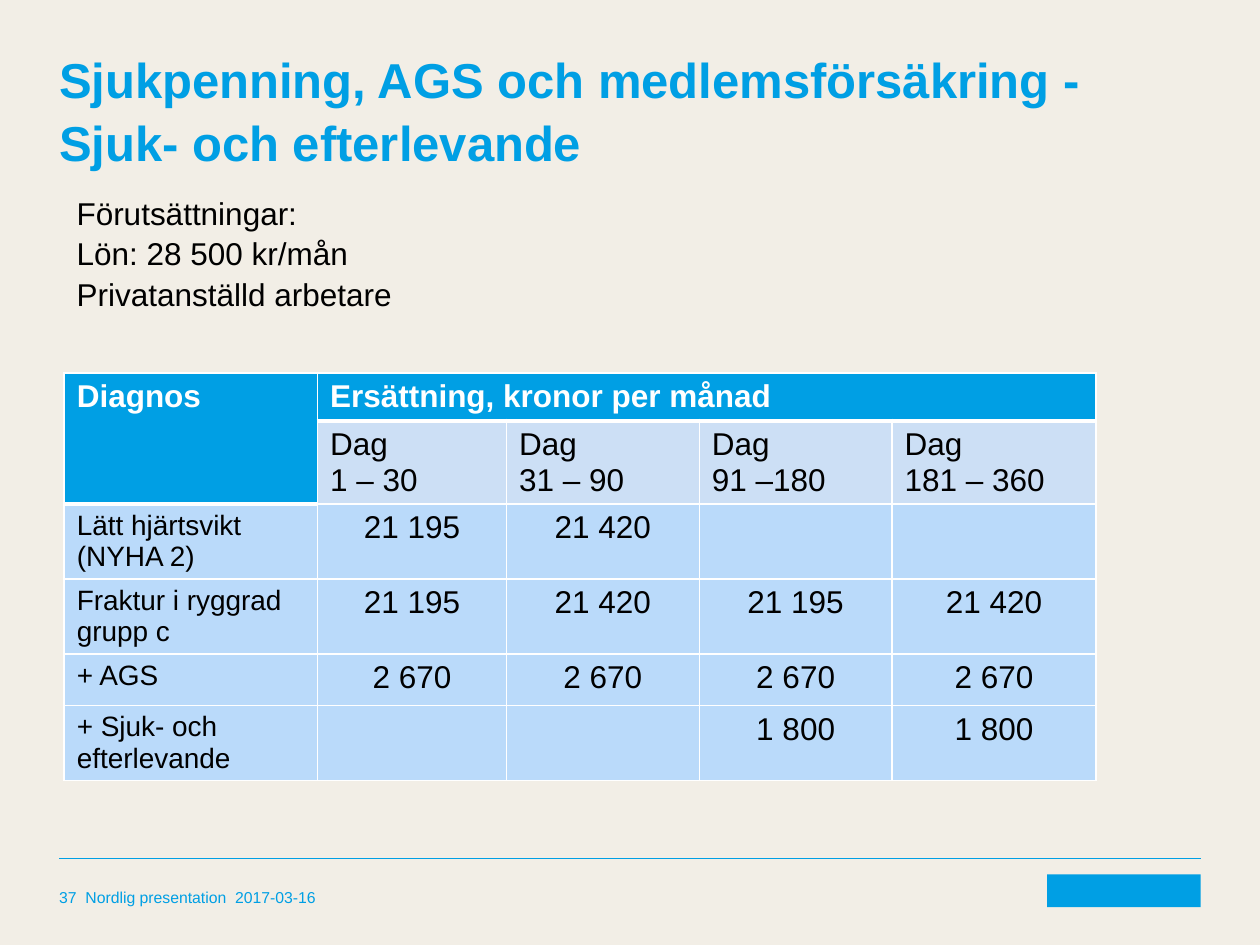
from dataclasses import dataclass

from lxml.etree import SubElement
from pptx import Presentation
from pptx.dml.color import RGBColor
from pptx.enum.shapes import MSO_CONNECTOR as Connector, MSO_SHAPE as Shape
from pptx.enum.text import MSO_ANCHOR as Anchor, PP_ALIGN as Align
from pptx.oxml.ns import qn
from pptx.util import Inches, Pt

FONT = "Arial"
COLORS = {
    "background": "F2EEE6",
    "brand": "009FE4",
    "subheader": "CCDFF5",
    "body": "BADAFA",
    "white": "FFFFFF",
    "black": "000000",
}
COLUMN_WIDTHS = (2.01, 1.5, 1.53, 1.53, 1.62)
ROW_HEIGHTS = (0.38, 0.66, 0.59, 0.59, 0.41, 0.59)
TABLE_ROWS = (
    ("Diagnos", "Ersättning, kronor per månad", "", "", ""),
    ("", "Dag\n1 – 30", "Dag\n31 – 90", "Dag\n91 –180", "Dag\n181 – 360"),
    ("Lätt hjärtsvikt (NYHA 2)", "21 195", "21 420", "", ""),
    ("Fraktur i ryggrad grupp c", "21 195", "21 420", "21 195", "21 420"),
    ("+ AGS", "2 670", "2 670", "2 670", "2 670"),
    ("+ Sjuk- och efterlevande", "", "", "1 800", "1 800"),
)


@dataclass(frozen=True)
class TextStyle:
    size: float
    color: str
    bold: bool = False
    align: Align = Align.LEFT
    spacing: float = 1.0


@dataclass(frozen=True)
class TextBlock:
    text: str
    left: float
    top: float
    width: float
    height: float
    style: TextStyle
    margins: tuple[float, float] = (0, 0)
    anchor: Anchor = Anchor.TOP


TEXT_BLOCKS = (
    TextBlock("Sjukpenning, AGS och medlemsförsäkring - Sjuk- och efterlevande",
              0.47, 0.36, 9.06, 1.65, TextStyle(28, "brand", bold=True, spacing=1.07)),
    TextBlock("37  Nordlig presentation  2017-03-16",
              0.47, 6.94, 2.36, 0.26, TextStyle(9, "brand"), anchor=Anchor.BOTTOM),
    TextBlock("Förutsättningar:\nLön: 28 500 kr/mån\nPrivatanställd arbetare",
              0.51, 1.47, 3.23, 1.01, TextStyle(18, "black", spacing=1.07), (0.1, 0.05)),
)


def rgb(name: str) -> RGBColor:
    return RGBColor.from_string(COLORS[name])


def write_text(frame, text: str, style: TextStyle) -> None:
    frame.text = text
    for para in frame.paragraphs:
        para.alignment = style.align
        para.line_spacing = style.spacing
        para.font.name = FONT
        para.font.size = Pt(style.size)
        para.font.bold = style.bold
        para.font.color.rgb = rgb(style.color)


def add_text(slide, block: TextBlock) -> None:
    box = slide.shapes.add_textbox(Inches(block.left), Inches(block.top),
                                   Inches(block.width), Inches(block.height))
    frame = box.text_frame
    frame.word_wrap = True
    frame.vertical_anchor = block.anchor
    side, end = block.margins
    frame.margin_left = frame.margin_right = Inches(side)
    frame.margin_top = frame.margin_bottom = Inches(end)
    write_text(frame, block.text, block.style)


def border_below(row: int, column: int) -> int:
    """Width in points: thick under the header cells, thin elsewhere."""
    return 3 if row == 0 or (row, column) == (1, 0) else 1


def set_borders(cell, row: int, column: int) -> None:
    top = border_below(row - 1, column)
    bottom = border_below(row, column)
    properties = cell._tc.get_or_add_tcPr()
    for edge, width in (("lnL", 1), ("lnR", 1), ("lnT", top), ("lnB", bottom)):
        line = SubElement(properties, qn(f"a:{edge}"), w=str(Pt(width)))
        fill = SubElement(line, qn("a:solidFill"))
        SubElement(fill, qn("a:srgbClr"), val=COLORS["white"])


def cell_look(row: int, column: int) -> tuple[str, TextStyle]:
    """Fill colour name and text style for a table position."""
    if row == 0 or (row, column) == (1, 0):
        return "brand", TextStyle(18, "white", bold=True)
    if row == 1:
        return "subheader", TextStyle(18, "black")
    if column == 0:
        return "body", TextStyle(16, "black")
    return "body", TextStyle(18, "black", align=Align.CENTER)


def add_benefit_table(slide) -> None:
    table = slide.shapes.add_table(
        len(ROW_HEIGHTS), len(COLUMN_WIDTHS), Inches(0.51), Inches(2.96),
        Inches(sum(COLUMN_WIDTHS)), Inches(sum(ROW_HEIGHTS))).table
    table.first_row = table.horz_banding = False
    for column, width in zip(table.columns, COLUMN_WIDTHS):
        column.width = Inches(width)
    for row, height in zip(table.rows, ROW_HEIGHTS):
        row.height = Inches(height)
    for row, texts in enumerate(TABLE_ROWS):
        for column, text in enumerate(texts):
            cell = table.cell(row, column)
            fill, style = cell_look(row, column)
            set_borders(cell, row, column)
            cell.fill.solid()
            cell.fill.fore_color.rgb = rgb(fill)
            write_text(cell.text_frame, text, style)
    table.cell(0, 0).merge(table.cell(1, 0))
    table.cell(0, 1).merge(table.cell(0, 4))


def add_footer_rule(slide) -> None:
    rule = slide.shapes.add_connector(Connector.STRAIGHT, Inches(0.47), Inches(6.81),
                                      Inches(9.53), Inches(6.81))
    rule.line.color.rgb = rgb("brand")
    rule.line.width = Pt(0.5)
    SubElement(rule._element.spPr, qn("a:effectLst"))


def add_brand_block(slide) -> None:
    block = slide.shapes.add_shape(Shape.RECTANGLE, Inches(8.31), Inches(6.94),
                                   Inches(1.22), Inches(0.26))
    block.shadow.inherit = False
    block.fill.solid()
    block.fill.fore_color.rgb = rgb("brand")
    block.line.fill.background()


def main() -> None:
    deck = Presentation()
    deck.slide_width, deck.slide_height = Inches(10), Inches(7.5)
    slide = deck.slides.add_slide(deck.slide_layouts[6])
    slide.background.fill.solid()
    slide.background.fill.fore_color.rgb = rgb("background")
    add_footer_rule(slide)
    add_brand_block(slide)
    add_benefit_table(slide)
    for block in TEXT_BLOCKS:
        add_text(slide, block)
    deck.save("out.pptx")


if __name__ == "__main__":
    main()
